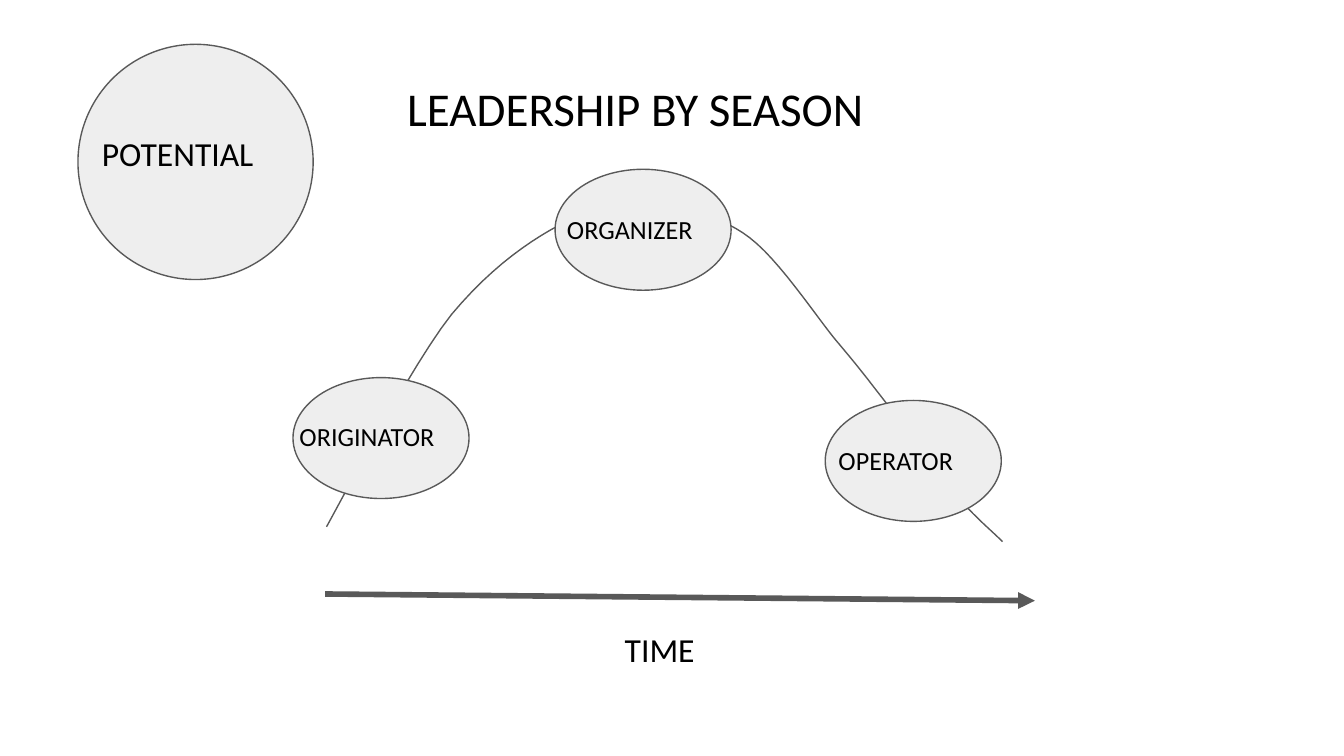
from lxml import etree
from pptx import Presentation
from pptx.dml.color import RGBColor
from pptx.enum.shapes import MSO_CONNECTOR, MSO_SHAPE
from pptx.enum.text import MSO_ANCHOR, MSO_AUTO_SIZE, PP_ALIGN
from pptx.oxml.ns import qn
from pptx.util import Inches, Pt

ELLIPSE = MSO_SHAPE.OVAL
STRAIGHT = MSO_CONNECTOR.STRAIGHT
TOP = MSO_ANCHOR.TOP
LEFT = PP_ALIGN.LEFT
GROW = MSO_AUTO_SIZE.SHAPE_TO_FIT_TEXT

FONT = "Calibri"
BLACK, GREY, PALE = "000000", "595959", "EEEEEE"
STEPS_PER_CURVE = 12

SEASON_ELLIPSES = [(2.18, 2.81), (4.13, 1.26), (6.14, 2.98)]
SEASON_LABELS = [
    ("ORIGINATOR", 2.13, 3.03),
    ("ORGANIZER", 4.12, 1.49),
    ("OPERATOR", 6.14, 3.21),
]

# Each curve: two control points and an end point
ARC_START = (2.43, 3.92)
ARC_CURVES = [
    ((2.58, 3.65), (3.06, 2.72), (3.36, 2.34)),
    ((3.67, 1.97), (3.97, 1.77), (4.23, 1.64)),
    ((4.5, 1.51), (4.72, 1.54), (4.95, 1.56)),
    ((5.17, 1.58), (5.37, 1.61), (5.58, 1.77)),
    ((5.79, 1.93), (6.05, 2.32), (6.21, 2.52)),
    ((6.38, 2.72), (6.44, 2.8), (6.58, 2.98)),
    ((6.72, 3.16), (6.9, 3.43), (7.05, 3.61)),
    ((7.19, 3.79), (7.39, 3.96), (7.46, 4.03)),
]


def color(value):
    return RGBColor.from_string(value)


def style_line(line, width):
    line.color.rgb = color(GREY)
    line.width = Pt(width)


def fill_text(box, text, size):
    frame = box.text_frame
    frame.text = text
    frame.word_wrap = True
    frame.vertical_anchor = TOP
    frame.margin_left = frame.margin_right = Inches(0.1)
    frame.margin_top = frame.margin_bottom = Inches(0.1)
    para = frame.paragraphs[0]
    para.alignment = LEFT
    font = para.runs[0].font
    font.name = FONT
    font.size = Pt(size)
    font.color.rgb = color(BLACK)


def set_title(page, text):
    title = page.shapes.title
    title.left, title.top = Inches(2.93), Inches(0.49)
    title.width, title.height = Inches(6.73), Inches(0.63)
    fill_text(title, text, 25.2)


def add_label(page, text, left, top, width, height, size):
    box = page.shapes.add_textbox(
        Inches(left), Inches(top), Inches(width), Inches(height))
    fill_text(box, text, size)
    box.text_frame.auto_size = GROW


def add_ellipse(page, left, top, width, height):
    ellipse = page.shapes.add_shape(
        ELLIPSE, Inches(left), Inches(top), Inches(width), Inches(height))
    ellipse.shadow.inherit = False
    ellipse.fill.solid()
    ellipse.fill.fore_color.rgb = color(PALE)
    style_line(ellipse.line, 0.75)


def add_arrow(page, start, end):
    arrow = page.shapes.add_connector(
        STRAIGHT, *(Inches(value) for value in start + end))
    style_line(arrow.line, 3)
    line = arrow._element.spPr.find(qn("a:ln"))
    etree.SubElement(line, qn("a:tailEnd"), type="triangle")
    etree.SubElement(arrow._element.spPr, qn("a:effectLst"))


def curve_points(start, curves):
    """Sample a chain of cubic Bezier curves, leaving out the start point."""
    points = []
    for first, second, end in curves:
        for step in range(1, STEPS_PER_CURVE + 1):
            t = step / STEPS_PER_CURVE
            u = 1 - t
            points.append(tuple(
                Inches(u**3 * a + 3 * u * u * t * b + 3 * u * t * t * c + t**3 * d)
                for a, b, c, d in zip(start, first, second, end)))
        start = end
    return points


def add_arc(page):
    builder = page.shapes.build_freeform(*(Inches(value) for value in ARC_START))
    builder.add_line_segments(curve_points(ARC_START, ARC_CURVES), close=False)
    arc = builder.convert_to_shape()
    arc.shadow.inherit = False
    arc.fill.background()
    style_line(arc.line, 0.75)


def main():
    deck = Presentation()
    deck.slide_width = Inches(10)
    deck.slide_height = deck.slide_width * 9 // 16
    page = deck.slides.add_slide(deck.slide_layouts[5])

    set_title(page, "LEADERSHIP BY SEASON")
    add_ellipse(page, 0.58, 0.33, 1.75, 1.75)
    add_label(page, "POTENTIAL", 0.66, 0.89, 1.75, 0.5, 18)
    add_arrow(page, (2.42, 4.42), (7.7, 4.47))
    add_label(page, "TIME", 4.55, 4.58, 0.89, 0.5, 18)

    add_arc(page)
    for left, top in SEASON_ELLIPSES:
        add_ellipse(page, left, top, 1.31, 0.9)
    for name, left, top in SEASON_LABELS:
        add_label(page, name, left, top, 1.75, 0.44, 14)

    deck.save("out.pptx")


if __name__ == "__main__":
    main()
